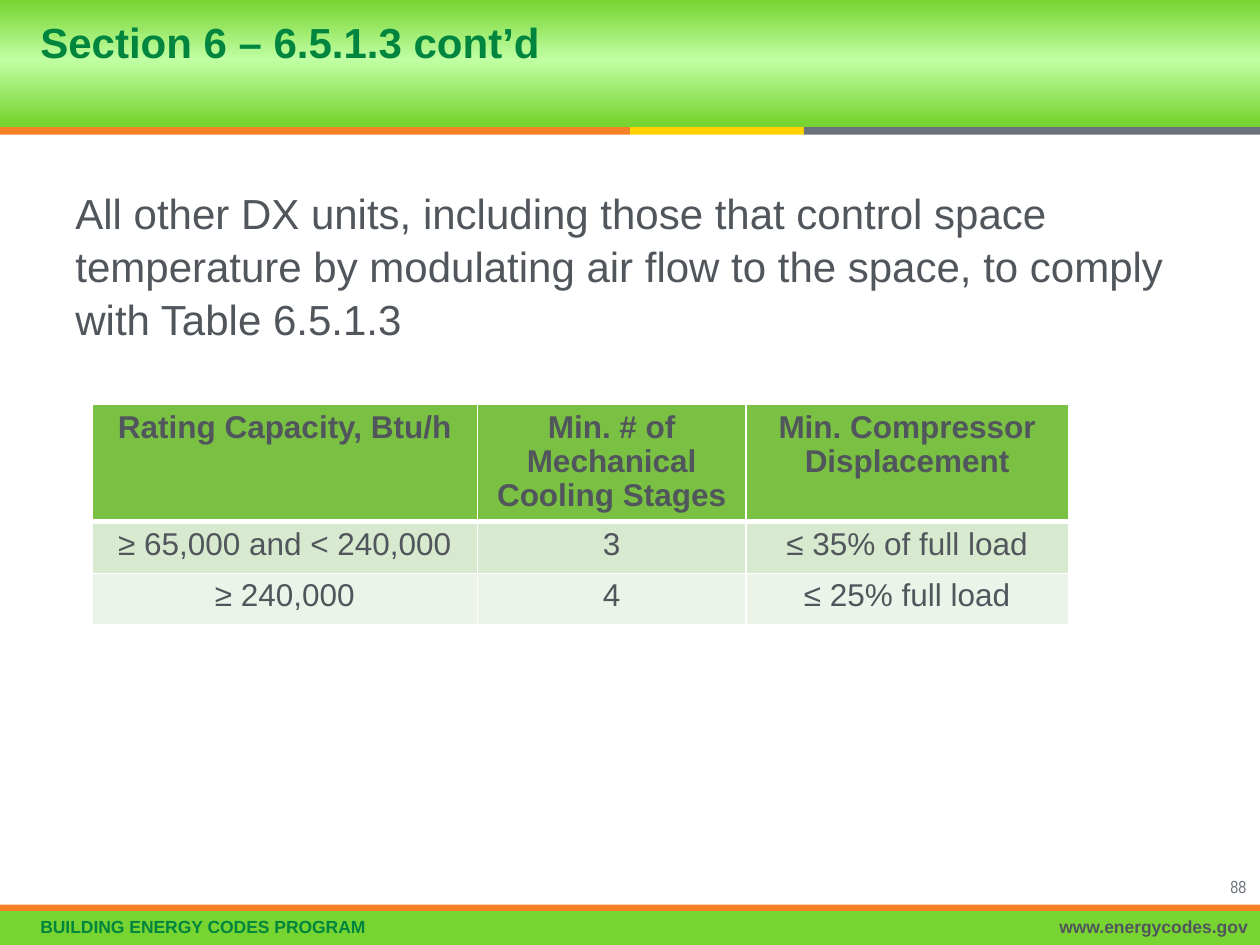
from dataclasses import dataclass

from lxml.etree import SubElement
from pptx import Presentation
from pptx.dml.color import RGBColor
from pptx.enum.shapes import MSO_SHAPE as Shape
from pptx.enum.text import MSO_ANCHOR as Anchor, PP_ALIGN as Align
from pptx.oxml.ns import qn
from pptx.util import Inches, Pt


@dataclass(frozen=True)
class Theme:
    font: str = "Arial"
    narrow_font: str = "Arial Narrow"
    large: int = 24
    table: int = 18
    small: int = 10
    text: str = "50565C"
    green: str = "00853F"
    lime: str = "78D430"
    pale_lime: str = "C0FFA4"
    orange: str = "F58025"
    yellow: str = "FFD200"
    gray: str = "6A737B"
    white: str = "FFFFFF"
    header: str = "7AC143"
    bands: tuple = ("D7E9CF", "ECF4E9")


THEME = Theme()
TABLE_ROWS = [
    ("Rating Capacity, Btu/h", "Min. # of Mechanical Cooling Stages",
     "Min. Compressor Displacement"),
    ("≥ 65,000 and < 240,000", "3", "≤ 35% of full load"),
    ("≥ 240,000", "4", "≤ 25% full load"),
]


def set_attributes(target, values):
    for name, value in values.items():
        setattr(target, name, value)


def write_text(frame, text, size, color=THEME.text, bold=False,
               font=THEME.font, **layout):
    paragraph = frame.paragraphs[0]
    paragraph.text = text
    set_attributes(paragraph, layout)
    set_attributes(paragraph.font, {"name": font, "size": Pt(size), "bold": bold})
    paragraph.font.color.rgb = RGBColor.from_string(color)


def add_bar(slide, box, color):
    shape = slide.shapes.add_shape(Shape.RECTANGLE, *map(Inches, box))
    shape.shadow.inherit = False
    shape.line.fill.background()
    shape.fill.solid()
    shape.fill.fore_color.rgb = RGBColor.from_string(color)
    return shape


def add_gradient_band(slide, box, stops):
    shape = add_bar(slide, box, THEME.lime)
    shape.fill.gradient()
    shape.fill.gradient_angle = 270
    stop_list = shape._element.spPr.find(qn("a:gradFill")).find(qn("a:gsLst"))
    for stop in list(stop_list):
        stop_list.remove(stop)
    for percent, color in stops:
        stop = SubElement(stop_list, qn("a:gs"), pos=str(percent * 1000))
        SubElement(stop, qn("a:srgbClr"), val=color)


def add_label(slide, box, text, size, margin_left=0.1, **style):
    frame = slide.shapes.add_textbox(*map(Inches, box)).text_frame
    set_attributes(frame, {"word_wrap": True, "margin_left": Inches(margin_left)})
    write_text(frame, text, size, **style)


def place_title(slide, text):
    title = slide.shapes.title
    slide.shapes._spTree.append(title._element)
    set_attributes(title, {"left": Inches(0.22), "top": Inches(0),
                           "width": Inches(9.75), "height": Inches(1)})
    set_attributes(title.text_frame, {"vertical_anchor": Anchor.TOP,
                                      "margin_top": Inches(0.21)})
    write_text(title.text_frame, text, THEME.large, THEME.green, True,
               alignment=Align.LEFT, line_spacing=0.8)


def set_borders(cell, bottom):
    properties = cell._tc.get_or_add_tcPr()
    for side, width in (("L", 1), ("R", 1), ("T", 1), ("B", bottom)):
        line = SubElement(properties, qn(f"a:ln{side}"), w=str(Pt(width)))
        fill = SubElement(line, qn("a:solidFill"))
        SubElement(fill, qn("a:srgbClr"), val=THEME.white)


def add_capacity_table(slide):
    widths, heights = (3.06, 2.13, 2.56), (0.93, 0.41, 0.41)
    table = slide.shapes.add_table(
        len(heights), len(widths), Inches(0.73), Inches(3.21),
        Inches(sum(widths)), Inches(sum(heights))).table
    for column, width in zip(table.columns, widths):
        column.width = Inches(width)
    for index, (row, height, texts) in enumerate(
            zip(table.rows, heights, TABLE_ROWS)):
        row.height = Inches(height)
        is_header = index == 0
        color = THEME.header if is_header else THEME.bands[index - 1]
        for cell, text in zip(row.cells, texts):
            set_borders(cell, 3 if is_header else 1)
            cell.fill.solid()
            cell.fill.fore_color.rgb = RGBColor.from_string(color)
            write_text(cell.text_frame, text, THEME.table, bold=is_header,
                       alignment=Align.CENTER, line_spacing=0.97)


def add_frame(slide):
    add_gradient_band(slide, (-0.03, 0, 10.03, 1.01),
                      ((0, THEME.lime), (47, THEME.pale_lime), (97, THEME.lime)))
    left = 0
    for width, color in ((5, THEME.orange), (1.38, THEME.yellow),
                         (3.62, THEME.gray)):
        add_bar(slide, (left, 1.01, width, 0.06), color)
        left += width
    add_bar(slide, (0, 7.23, 10, 0.27), THEME.lime)
    add_bar(slide, (0, 7.18, 10, 0.05), THEME.orange)
    add_label(slide, (0.07, 7.24, 7.97, 0.26), "BUILDING ENERGY CODES PROGRAM",
              THEME.small, 0.25, color=THEME.green, bold=True, line_spacing=0.9)
    add_label(slide, (5.99, 7.24, 4.01, 0.26), "www.energycodes.gov",
              THEME.small, bold=True, alignment=Align.RIGHT, line_spacing=0.9)
    add_label(slide, (9.28, 6.9, 0.71, 0.18), "88", THEME.small,
              color=THEME.gray, font=THEME.narrow_font, alignment=Align.RIGHT)


def main():
    presentation = Presentation()
    set_attributes(presentation, {"slide_width": Inches(10),
                                  "slide_height": Inches(7.5)})
    slide = presentation.slides.add_slide(presentation.slide_layouts[5])
    add_frame(slide)
    add_label(slide, (0.5, 1.42, 8.92, 1.5),
              "All other DX units, including those that control space "
              "temperature by modulating air flow to the space, to comply "
              "with Table 6.5.1.3", THEME.large, line_spacing=1.05)
    place_title(slide, "Section 6 – 6.5.1.3 cont’d")
    add_capacity_table(slide)
    presentation.save("out.pptx")


if __name__ == "__main__":
    main()
